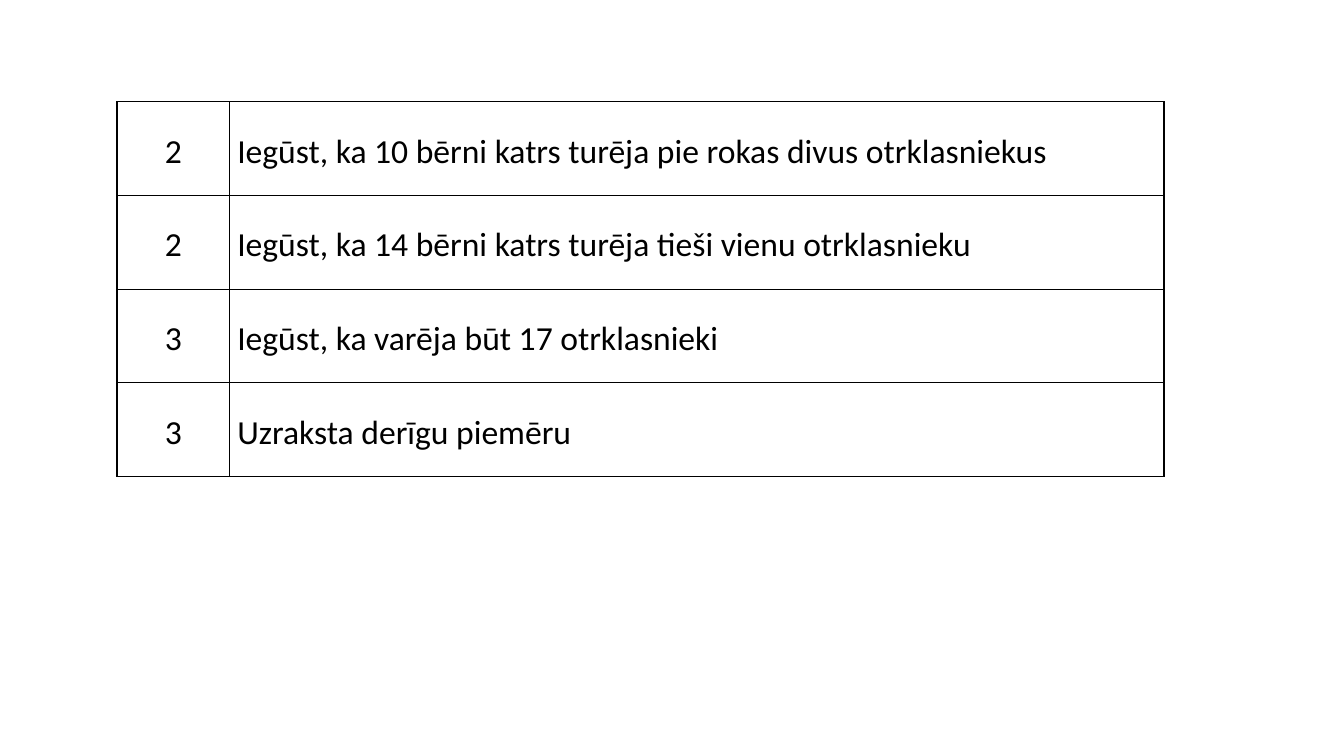
from lxml.etree import SubElement as Sub
from pptx import Presentation
from pptx.dml.color import RGBColor
from pptx.enum.text import MSO_ANCHOR as Anchor, PP_ALIGN as Align
from pptx.oxml.ns import qn
from pptx.util import Pt

ROWS = [
    ("2", "Iegūst, ka 10 bērni katrs turēja pie rokas divus otrklasniekus"),
    ("2", "Iegūst, ka 14 bērni katrs turēja tieši vienu otrklasnieku"),
    ("3", "Iegūst, ka varēja būt 17 otrklasnieki"),
    ("3", "Uzraksta derīgu piemēru"),
]
ALIGNS = (Align.CENTER, Align.LEFT)
WIDTHS = (80.6, 667.4)
LEFT, TOP, HIGH = 83.5, 72.7, 66.9
BLACK = RGBColor(0, 0, 0)


def add_edges(cell):
    props = cell._tc.get_or_add_tcPr()
    for side in ("lnL", "lnR", "lnT", "lnB"):
        line = Sub(props, qn("a:" + side), w=str(Pt(1)))
        fill = Sub(line, qn("a:solidFill"))
        Sub(fill, qn("a:srgbClr"), val=str(BLACK))


def fill_cell(cell, text, align):
    add_edges(cell)
    cell.fill.background()
    cell.vertical_anchor = Anchor.MIDDLE
    cell.margin_left = cell.margin_right = Pt(5.4)
    cell.margin_top = cell.margin_bottom = 0
    cell.text = text
    para = cell.text_frame.paragraphs[0]
    para.alignment = align
    para.line_spacing = 1.15
    para.space_after = Pt(10)
    para.font.name = "Calibri"
    para.font.size = Pt(24)
    para.font.bold = False
    para.font.color.rgb = BLACK


def main():
    deck = Presentation()
    deck.slide_width, deck.slide_height = Pt(960), Pt(540)
    slide = deck.slides.add_slide(deck.slide_layouts[6])
    frame = slide.shapes.add_table(
        len(ROWS), len(WIDTHS), Pt(LEFT), Pt(TOP),
        Pt(sum(WIDTHS)), Pt(HIGH * len(ROWS)))
    table = frame.table
    table.first_row = table.horz_banding = False
    for col, width in zip(table.columns, WIDTHS):
        col.width = Pt(width)
    for row, texts in zip(table.rows, ROWS):
        row.height = Pt(HIGH)
        for cell, text, align in zip(row.cells, texts, ALIGNS):
            fill_cell(cell, text, align)
    deck.save("out.pptx")


if __name__ == "__main__":
    main()
